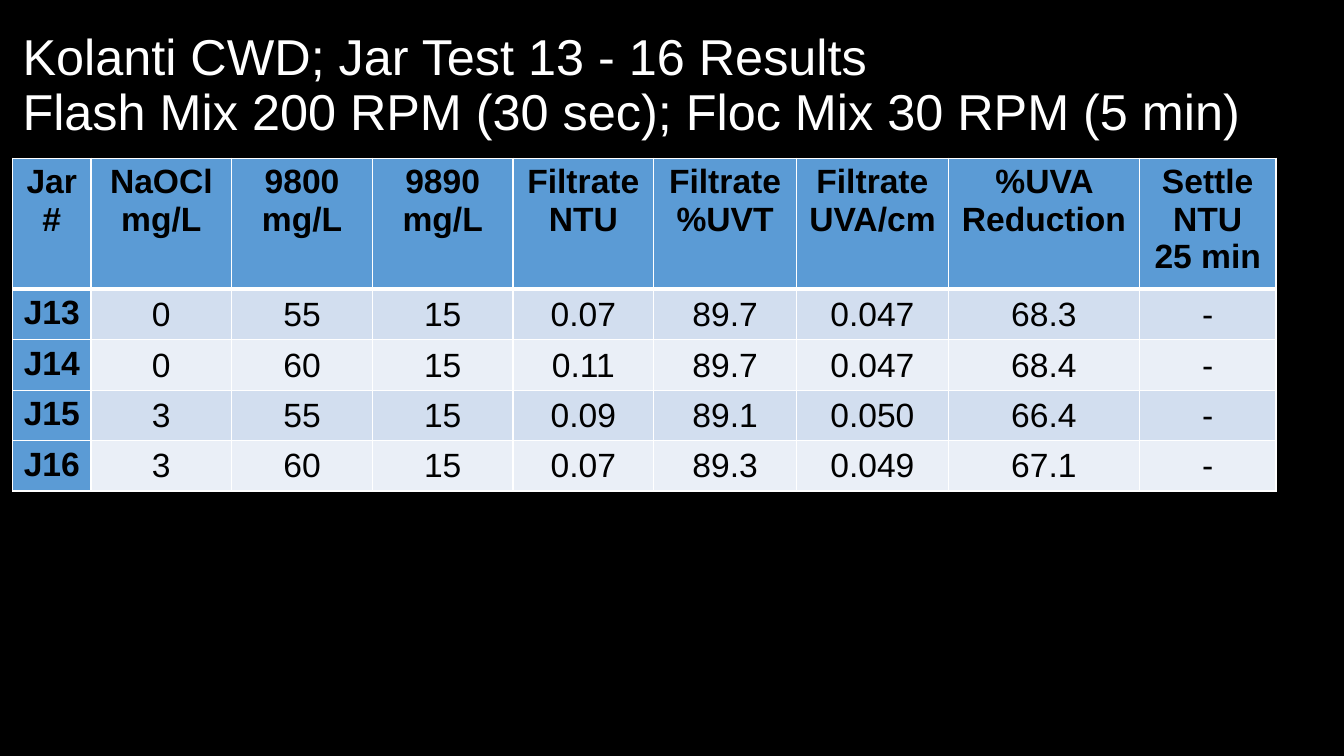
"""Build a slide with a table of jar test results."""
from dataclasses import dataclass

from lxml.etree import SubElement
from pptx import Presentation
from pptx.dml.color import RGBColor
from pptx.enum.text import MSO_ANCHOR, PP_ALIGN
from pptx.oxml.ns import qn
from pptx.util import Pt

CENTER = PP_ALIGN.CENTER
LEFT = PP_ALIGN.LEFT
MIDDLE = MSO_ANCHOR.MIDDLE
TOP = MSO_ANCHOR.TOP


@dataclass(frozen=True)
class Theme:
    """Hold the colours, font and type sizes."""
    font: str = "Arial"
    back: str = "000000"
    light: str = "FFFFFF"
    dark: str = "000000"
    head: str = "5B9BD5"
    bands: tuple = ("D2DEEF", "EAEFF7")
    title: int = 36
    body: int = 24


class Deck:
    """Draw styled elements on the current slide."""

    def __init__(self, theme, width, height):
        """Open a deck with one blank slide."""
        self.theme = theme
        self.file = Presentation()
        self.file.slide_width = Pt(width)
        self.file.slide_height = Pt(height)
        self.slide = self.file.slides.add_slide(self.file.slide_layouts[6])
        self.paint(self.slide.background.fill, theme.back)

    def paint(self, fill, color):
        """Give a fill one solid colour."""
        fill.solid()
        fill.fore_color.rgb = RGBColor.from_string(color)

    def add_text(self, para, text, size, color, bold=False, align=LEFT):
        """Add one styled run to a paragraph."""
        para.alignment = align
        run = para.add_run()
        run.text = text
        run.font.name = self.theme.font
        run.font.size = Pt(size)
        run.font.bold = bold
        run.font.color.rgb = RGBColor.from_string(color)

    def title(self, lines, left, top, width, height):
        """Add a title with a line break between its lines."""
        box = self.slide.shapes.add_textbox(Pt(left), Pt(top), Pt(width), Pt(height))
        frame = box.text_frame
        frame.word_wrap = True
        frame.vertical_anchor = MIDDLE
        para = frame.paragraphs[0]
        para.line_spacing = 0.9
        for index, line in enumerate(lines):
            if index:
                para.add_line_break()
            self.add_text(para, line, self.theme.title, self.theme.light)

    def border(self, cell, top, bottom):
        """Draw the four edges of a cell."""
        props = cell._tc.get_or_add_tcPr()
        for index, (side, width) in enumerate(
            (("L", 1), ("R", 1), ("T", top), ("B", bottom))
        ):
            line = SubElement(props, qn(f"a:ln{side}"), w=str(Pt(width)))
            fill = SubElement(line, qn("a:solidFill"))
            SubElement(fill, qn("a:srgbClr"), val=self.theme.light)
            props.insert(index, line)

    def cell(self, cell, text, row, col):
        """Style and fill one table cell."""
        label = row == 0 or col == 0
        color = self.theme.head if label else self.theme.bands[(row - 1) % 2]
        self.paint(cell.fill, color)
        self.border(cell, 3 if row == 1 else 1, 3 if row == 0 else 1)
        cell.vertical_anchor = TOP if label else MIDDLE
        if not label:
            cell.margin_left = cell.margin_right = cell.margin_top = Pt(0.72)
            cell.margin_bottom = Pt(0)
        frame = cell.text_frame
        for index, line in enumerate(text.split("\n")):
            para = frame.add_paragraph() if index else frame.paragraphs[0]
            self.add_text(para, line, self.theme.body, self.theme.dark, label, CENTER)

    def table(self, rows, left, top, widths, heights):
        """Add a table with a header row and a label column."""
        frame = self.slide.shapes.add_table(
            len(rows), len(widths), Pt(left), Pt(top),
            Pt(sum(widths)), Pt(sum(heights)),
        )
        grid = frame.table
        for column, width in zip(grid.columns, widths):
            column.width = Pt(width)
        for line, height in zip(grid.rows, heights):
            line.height = Pt(height)
        for row, texts in enumerate(rows):
            for col, text in enumerate(texts):
                self.cell(grid.cell(row, col), text, row, col)


TITLE = (
    "Kolanti CWD; Jar Test 13 - 16 Results",
    "Flash Mix 200 RPM (30 sec); Floc Mix 30 RPM (5 min)",
)
ROWS = (
    ("Jar#", "NaOCl\nmg/L", "9800\nmg/L", "9890\nmg/L", "Filtrate\nNTU",
     "Filtrate\n%UVT", "Filtrate\nUVA/cm", "%UVA Reduction", "Settle\nNTU\n25 min"),
    ("J13", "0", "55", "15", "0.07", "89.7", "0.047", "68.3", "-"),
    ("J14", "0", "60", "15", "0.11", "89.7", "0.047", "68.4", "-"),
    ("J15", "3", "55", "15", "0.09", "89.1", "0.050", "66.4", "-"),
    ("J16", "3", "60", "15", "0.07", "89.3", "0.049", "67.1", "-"),
)
WIDTHS = (56, *[100.5] * 4, 102, 108.5, 136.5, 97.5)
HEIGHTS = (87.5, *[34] * 4)


def main():
    """Build and save the slide."""
    deck = Deck(Theme(), 960, 540)
    deck.title(TITLE, 9, 9.5, 938, 104.5)
    deck.table(ROWS, 9, 113, WIDTHS, HEIGHTS)
    deck.file.save("out.pptx")


if __name__ == "__main__":
    main()
